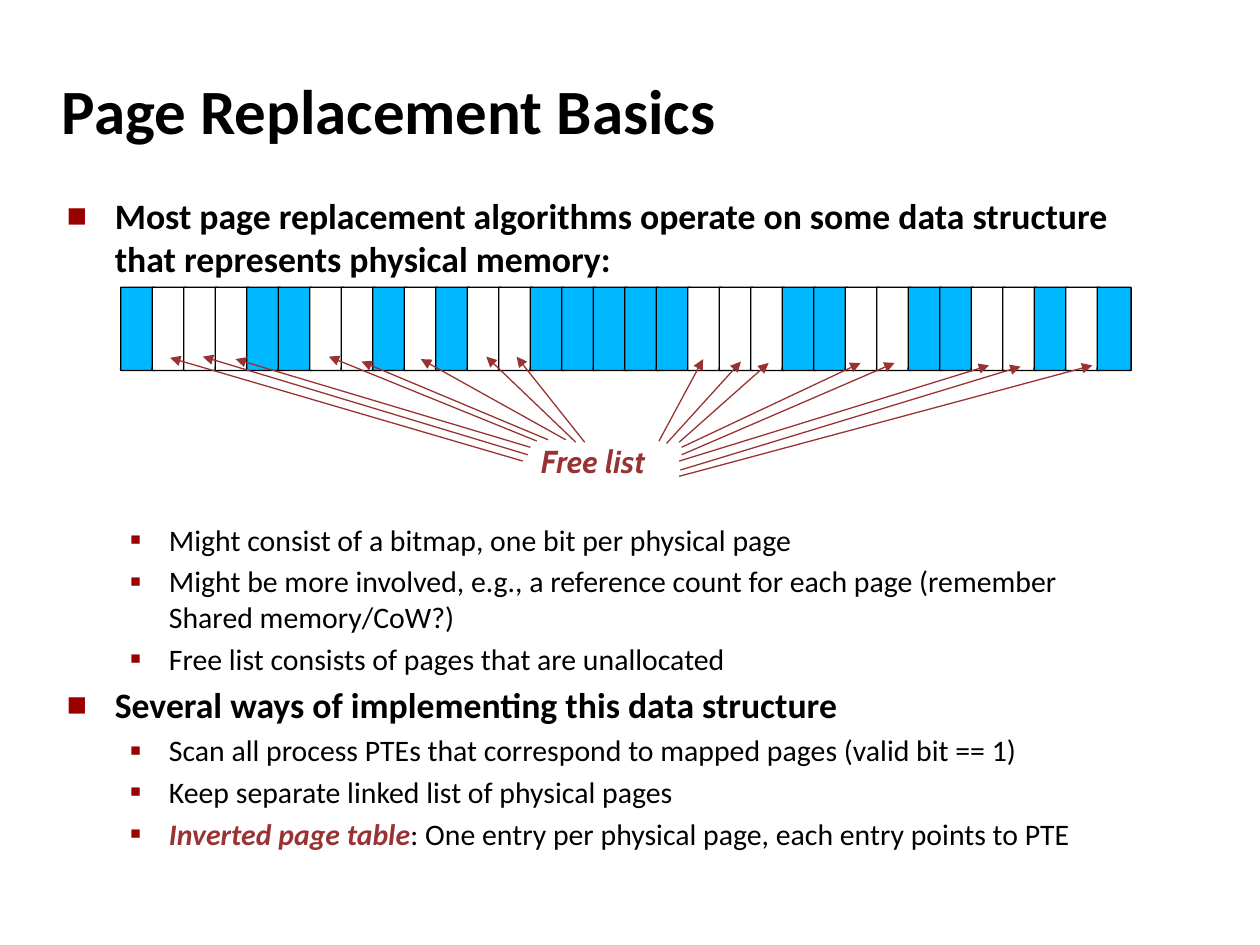
import dataclasses

import lxml.etree
import pptx
import pptx.dml.color
import pptx.enum.shapes
import pptx.enum.text
import pptx.oxml.ns
import pptx.util

Pt = pptx.util.Pt
qn = pptx.oxml.ns.qn


@dataclasses.dataclass(frozen=True)
class Theme:
    """Colours, fonts and type sizes of the slide."""
    ink: str = "000000"
    accent: str = "993333"
    bullet: str = "990000"
    allocated: str = "00B8FF"
    free: str = "FFFFFF"
    font: str = "Calibri"
    label_font: str = "Cabin"
    title_size: float = 36
    topic_size: float = 20.4
    detail_size: float = 17
    label_size: float = 18.1
    line_width: float = 0.75


THEME = Theme()

LEVELS = [
    {"size": THEME.topic_size, "bold": True, "mark": "■", "mark_pct": 60,
     "margin": 27.4, "hanging": 27.4, "before": 4.1},
    {"size": THEME.detail_size, "bold": False, "mark": "▪", "mark_pct": 110,
     "margin": 58.3, "hanging": 22.3, "before": 3.4},
]
DIAGRAM_GAP = 138

OUTLINE = [
    (0, "", "Most page replacement algorithms operate on some data structure "
            "that represents physical memory:"),
    (1, "", "Might consist of a bitmap, one bit per physical page"),
    (1, "", "Might be more involved, e.g., a reference count for each page "
            "(remember Shared memory/CoW?)"),
    (1, "", "Free list consists of pages that are unallocated"),
    (0, "", "Several ways of implementing this data structure"),
    (1, "", "Scan all process PTEs that correspond to mapped pages (valid bit == 1)"),
    (1, "", "Keep separate linked list of physical pages"),
    (1, "Inverted page table", ": One entry per physical page, each entry points to PTE"),
]

MEMORY_MAP = "10001100101001111100011001100101"
FRAME_LEFT, FRAME_TOP, FRAME_PITCH = 69, 164.2, 18
FRAME_WIDTH, FRAME_HEIGHT = 19.4, 47.5

FREE_LIST_LINKS = [
    ((298.8, 263.5), (97.2, 204.5)),
    ((301.7, 259.9), (115.9, 203.8)),
    ((303.1, 255.6), (134.6, 205.2)),
    ((306.7, 252), (187.9, 203.8)),
    ((313.2, 251.3), (206.6, 206.6)),
    ((323.3, 251.3), (240.5, 205.2)),
    ((329, 252.7), (277.9, 203.8)),
    ((334.1, 252.7), (295.2, 203.8)),
    ((376.6, 252), (401.8, 205.2)),
    ((380.9, 253.4), (423.4, 206.6)),
    ((388.1, 252.7), (439.2, 207.4)),
    ((389.5, 255.6), (491.8, 207.4)),
    ((389.5, 259.9), (511.2, 207.4)),
    ((388.1, 263.5), (565.2, 208.8)),
    ((388.8, 268.6), (583.2, 209.5)),
    ((388.1, 272.2), (624.2, 208.8)),
]


def rgb(value):
    """Return a colour object for a hex string."""
    return pptx.dml.color.RGBColor.from_string(value)


def apply_format(target, **values):
    """Set every given format value on the target."""
    for name, value in values.items():
        setattr(target, name, value)


def place(placeholder, left, top, width, height):
    """Move and size a placeholder, in points."""
    apply_format(placeholder, left=Pt(left), top=Pt(top), width=Pt(width), height=Pt(height))


def add_words(paragraph, words, size, color=THEME.ink, font=THEME.font, bold=True, italic=False):
    """Add one formatted run to a paragraph."""
    run = paragraph.add_run()
    run.text = words
    apply_format(run.font, size=Pt(size), name=font, bold=bold, italic=italic)
    run.font.color.rgb = rgb(color)


def set_bullet(paragraph, level):
    """Give a paragraph the hanging indent and square mark of its level."""
    properties = paragraph._p.get_or_add_pPr()
    properties.set("marL", str(Pt(level["margin"])))
    properties.set("indent", str(-Pt(level["hanging"])))
    mark_color = lxml.etree.SubElement(properties, qn("a:buClr"))
    lxml.etree.SubElement(mark_color, qn("a:srgbClr"), val=THEME.bullet)
    lxml.etree.SubElement(properties, qn("a:buSzPct"), val=str(level["mark_pct"] * 1000))
    lxml.etree.SubElement(properties, qn("a:buFont"), typeface=THEME.font)
    lxml.etree.SubElement(properties, qn("a:buChar"), char=level["mark"])


def fill_title(title):
    """Write the slide title."""
    place(title, 28.1, 34.6, 597.6, 59.8)
    apply_format(title.text_frame, vertical_anchor=pptx.enum.text.MSO_ANCHOR.MIDDLE,
                 auto_size=pptx.enum.text.MSO_AUTO_SIZE.NONE)
    heading = title.text_frame.paragraphs[0]
    apply_format(heading, alignment=pptx.enum.text.PP_ALIGN.LEFT, line_spacing=0.94)
    add_words(heading, "Page Replacement Basics", THEME.title_size)


def fill_outline(body):
    """Write the two-level list, leaving room for the diagram after its first topic."""
    place(body, 31, 107.3, 622.1, 391.7)
    apply_format(body.text_frame, vertical_anchor=pptx.enum.text.MSO_ANCHOR.TOP,
                 auto_size=pptx.enum.text.MSO_AUTO_SIZE.NONE)
    for position, (depth, term, words) in enumerate(OUTLINE):
        level = LEVELS[depth]
        entry = body.text_frame.paragraphs[0] if position == 0 else body.text_frame.add_paragraph()
        gap = DIAGRAM_GAP if position == 1 else level["before"] if position else 0
        apply_format(entry, level=depth, space_before=Pt(gap))
        set_bullet(entry, level)
        if term:
            add_words(entry, term, level["size"], THEME.accent, italic=True)
        add_words(entry, words, level["size"], bold=level["bold"])


def add_frame(diagram, index, color):
    """Add one physical page frame to the memory strip."""
    frame = diagram.shapes.add_shape(
        pptx.enum.shapes.MSO_SHAPE.ROUNDED_RECTANGLE,
        Pt(FRAME_LEFT + index * FRAME_PITCH), Pt(FRAME_TOP), Pt(FRAME_WIDTH), Pt(FRAME_HEIGHT))
    frame.adjustments[0] = 0.01
    frame.shadow.inherit = False
    frame.fill.solid()
    frame.fill.fore_color.rgb = rgb(color)
    frame.line.color.rgb = rgb(THEME.ink)
    frame.line.width = Pt(THEME.line_width)


def add_label(diagram):
    """Add the free list label."""
    label = diagram.shapes.add_textbox(Pt(308.9), Pt(254.2), Pt(71.3), Pt(21.6)).text_frame
    apply_format(label, word_wrap=True, margin_left=0, margin_top=0,
                 margin_right=0, margin_bottom=0)
    label.paragraphs[0].line_spacing = 0.94
    add_words(label.paragraphs[0], "Free list", THEME.label_size, THEME.accent,
              THEME.label_font, italic=True)


def add_link(diagram, start, tip):
    """Add an arrow from the free list to a free page frame."""
    link = diagram.shapes.add_connector(
        pptx.enum.shapes.MSO_CONNECTOR.STRAIGHT, *(Pt(value) for value in (*start, *tip)))
    link.line.color.rgb = rgb(THEME.accent)
    link.line.width = Pt(THEME.line_width)
    properties = link.element.spPr
    lxml.etree.SubElement(properties.find(qn("a:ln")), qn("a:tailEnd"), type="triangle")
    lxml.etree.SubElement(properties, qn("a:effectLst"))


def main():
    """Build the slide and save it."""
    deck = pptx.Presentation()
    apply_format(deck, slide_width=Pt(720), slide_height=Pt(540))
    slide = deck.slides.add_slide(deck.slide_layouts[1])
    fill_title(slide.shapes.title)
    fill_outline(slide.placeholders[1])
    diagram = slide.shapes.add_group_shape()
    for index, bit in enumerate(MEMORY_MAP):
        add_frame(diagram, index, THEME.allocated if bit == "1" else THEME.free)
    add_label(diagram)
    for start, tip in FREE_LIST_LINKS:
        add_link(diagram, start, tip)
    deck.save("out.pptx")


if __name__ == "__main__":
    main()
